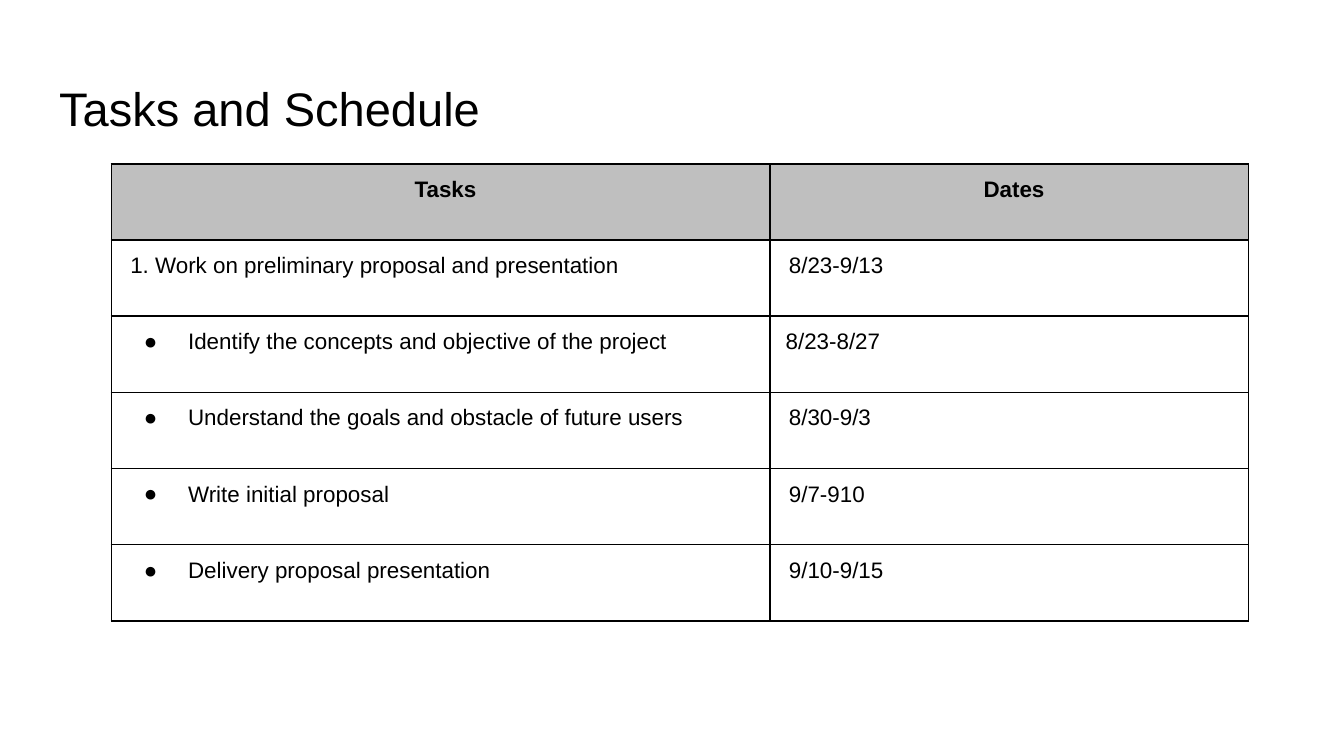
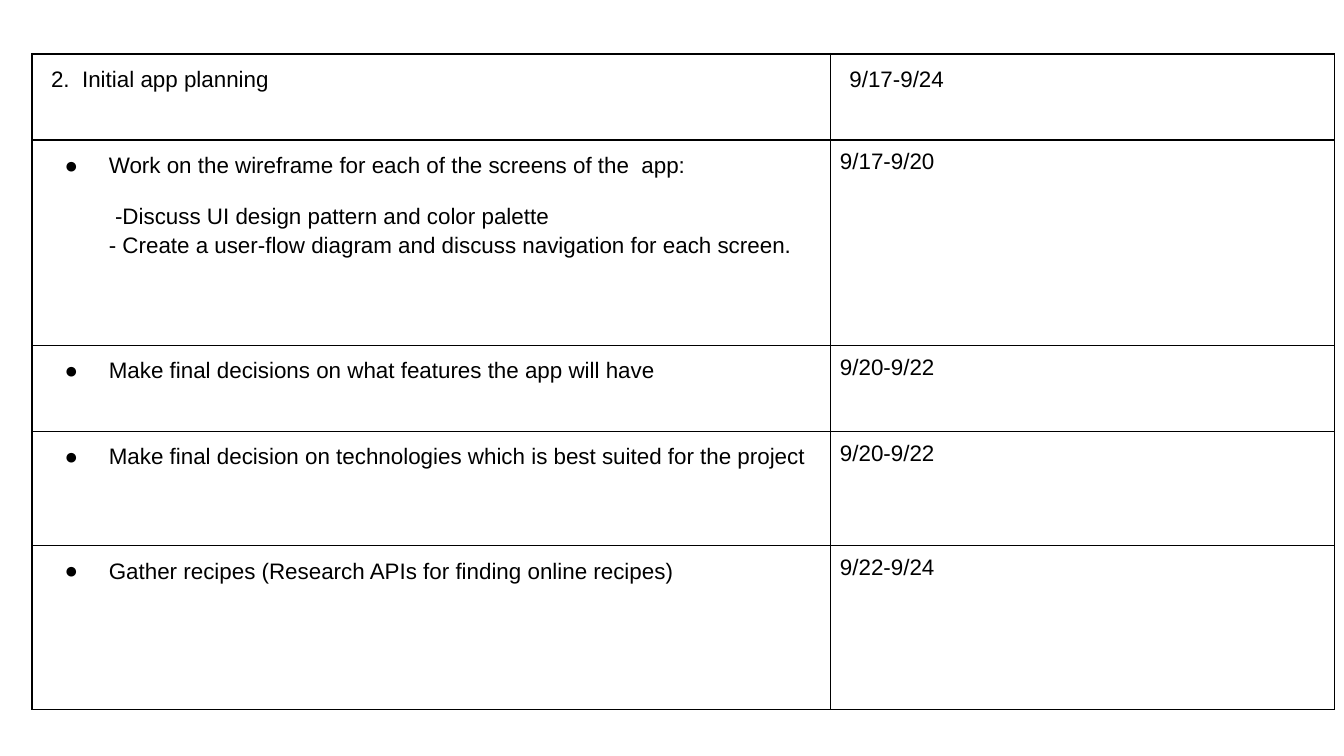
from dataclasses import dataclass

from lxml.etree import SubElement
from pptx import Presentation
from pptx.dml.color import RGBColor
from pptx.enum.text import MSO_ANCHOR, MSO_AUTO_SIZE, PP_ALIGN
from pptx.oxml.ns import qn
from pptx.util import Inches, Pt


@dataclass(frozen=True)
class Theme:
    """Colours, type sizes and measures shared by the slides."""
    font: str = "Arial"
    ink: str = "000000"
    paper: str = "FFFFFF"
    head: str = "BFBFBF"
    title: float = 25.2
    body: float = 12
    gap: float = 12
    lead: float = 1.15
    line: float = 1
    thin: float = 0.75
    pad: float = 0.07


THEME = Theme()

HEAD = dict(left=0.07, before=THEME.gap, after=THEME.gap, lead=THEME.lead,
            align=PP_ALIGN.CENTER, bold=True)
ITEM = dict(left=0.07, before=THEME.gap, after=THEME.gap, lead=THEME.lead)
FLUSH = dict(before=THEME.gap, after=THEME.gap, lead=THEME.lead)
BULLET = dict(left=0.5, hang=-0.33, before=THEME.gap, lead=THEME.lead, mark="●")
NOTE = dict(left=0.5, before=THEME.gap, lead=THEME.lead)
NEXT = dict(left=0.5, lead=THEME.lead)
PLAIN = dict()

FIRST = [
    ([("Tasks", HEAD)], [("Dates", HEAD)]),
    ([("1. Work on preliminary proposal and presentation", ITEM)],
     [("8/23-9/13", ITEM)]),
    ([("Identify the concepts and objective of the project", BULLET)],
     [(" 8/23-8/27", FLUSH)]),
    ([("Understand the goals and obstacle of future users", BULLET)],
     [("8/30-9/3", ITEM)]),
    ([("Write initial proposal", BULLET)], [("9/7-910", ITEM)]),
    ([("Delivery proposal presentation", BULLET)], [("9/10-9/15", ITEM)]),
]

SECOND = [
    ([("2.  Initial app planning", ITEM)], [("9/17-9/24", ITEM)]),
    ([("Work on the wireframe for each of the screens of the  app:", BULLET),
      (" -Discuss UI design pattern and color palette", NOTE),
      ("- Create a user-flow diagram and discuss navigation for each screen.",
       NEXT)],
     [("9/17-9/20", PLAIN)]),
    ([("Make final decisions on what features the app will have", BULLET)],
     [("9/20-9/22", PLAIN)]),
    ([("Make final decision on technologies which is best suited for the project",
       BULLET)],
     [("9/20-9/22", PLAIN)]),
    ([("Gather recipes (Research APIs for finding online recipes)", BULLET)],
     [("9/22-9/24", PLAIN)]),
]


def write(para, text, size=THEME.body, bold=False, align=PP_ALIGN.LEFT,
          left=0, hang=0, before=0, after=0, lead=1.0, mark=None):
    """Put formatted text into a paragraph."""
    run = para.add_run()
    run.text = text
    run.font.name = THEME.font
    run.font.size = Pt(size)
    run.font.bold = bold
    run.font.color.rgb = RGBColor.from_string(THEME.ink)
    para.alignment = align
    para.line_spacing = lead
    para.space_before = Pt(before)
    para.space_after = Pt(after)
    props = para._p.get_or_add_pPr()
    props.set("marL", str(Inches(left)))
    props.set("indent", str(Inches(hang)))
    if mark:
        tint = SubElement(props, qn("a:buClr"))
        SubElement(tint, qn("a:srgbClr"), val=THEME.ink)
        SubElement(props, qn("a:buSzPts"), val=str(int(size * 100)))
        SubElement(props, qn("a:buFont"), typeface=THEME.font)
        SubElement(props, qn("a:buChar"), char=mark)


def border(cell, thin=""):
    """Draw the four cell edges, with a finer line on the side named by thin."""
    props = cell._tc.get_or_add_tcPr()
    for side in "LRTB":
        width = THEME.thin if side == thin else THEME.line
        edge = SubElement(props, qn(f"a:ln{side}"), w=str(Pt(width)))
        fill = SubElement(edge, qn("a:solidFill"))
        SubElement(fill, qn("a:srgbClr"), val=THEME.ink)


def fill_cell(cell, lines, thin="", color=THEME.paper):
    """Set the edges, fill, margins and paragraphs of a cell."""
    border(cell, thin)
    cell.fill.solid()
    cell.fill.fore_color.rgb = RGBColor.from_string(color)
    cell.margin_left = cell.margin_right = Inches(THEME.pad)
    cell.margin_top = cell.margin_bottom = Inches(THEME.pad)
    cell.vertical_anchor = MSO_ANCHOR.TOP
    frame = cell.text_frame
    for num, (text, style) in enumerate(lines):
        para = frame.add_paragraph() if num else frame.paragraphs[0]
        write(para, text, **style)


def add_plan(slide, left, top, widths, heights, rows, header=False):
    """Build the table of tasks and dates at the given corner."""
    box = map(Inches, (left, top, sum(widths), sum(heights)))
    table = slide.shapes.add_table(len(rows), len(widths), *box).table
    table.first_row = table.horz_banding = False
    for col, width in zip(table.columns, widths):
        col.width = Inches(width)
    for r, (row, height) in enumerate(zip(rows, heights)):
        table.rows[r].height = Inches(height)
        top_row = header and r == 0
        for c, lines in enumerate(row):
            fill_cell(table.cell(r, c), lines,
                      thin="RL"[c] if top_row else "",
                      color=THEME.head if top_row else THEME.paper)


def add_title(slide, text, left, top, width, height):
    """Place and format the title placeholder."""
    title = slide.shapes.title
    title.left, title.top = Inches(left), Inches(top)
    title.width, title.height = Inches(width), Inches(height)
    frame = title.text_frame
    frame.auto_size = MSO_AUTO_SIZE.NONE
    frame.word_wrap = True
    frame.vertical_anchor = MSO_ANCHOR.TOP
    frame.margin_left = frame.margin_right = Inches(0.1)
    frame.margin_top = frame.margin_bottom = Inches(0.1)
    write(frame.paragraphs[0], text, size=THEME.title)


def main():
    """Build both schedule slides and save them."""
    deck = Presentation()
    deck.slide_width = Inches(10)
    deck.slide_height = Inches(10 * 9 / 16)
    titled, blank = deck.slide_layouts[5], deck.slide_layouts[6]

    slide = deck.slides.add_slide(titled)
    add_title(slide, "Tasks and Schedule", 0.34, 0.49, 9.32, 0.63)
    add_plan(slide, 0.83, 1.22, (4.9, 3.56), [3.4 / len(FIRST)] * len(FIRST),
             FIRST, header=True)

    slide = deck.slides.add_slide(blank)
    add_plan(slide, 0.24, 0.4, (5.94, 3.75), (0.64, 1.53, 0.64, 0.85, 1.22),
             SECOND)
    deck.save("out.pptx")


if __name__ == "__main__":
    main()
